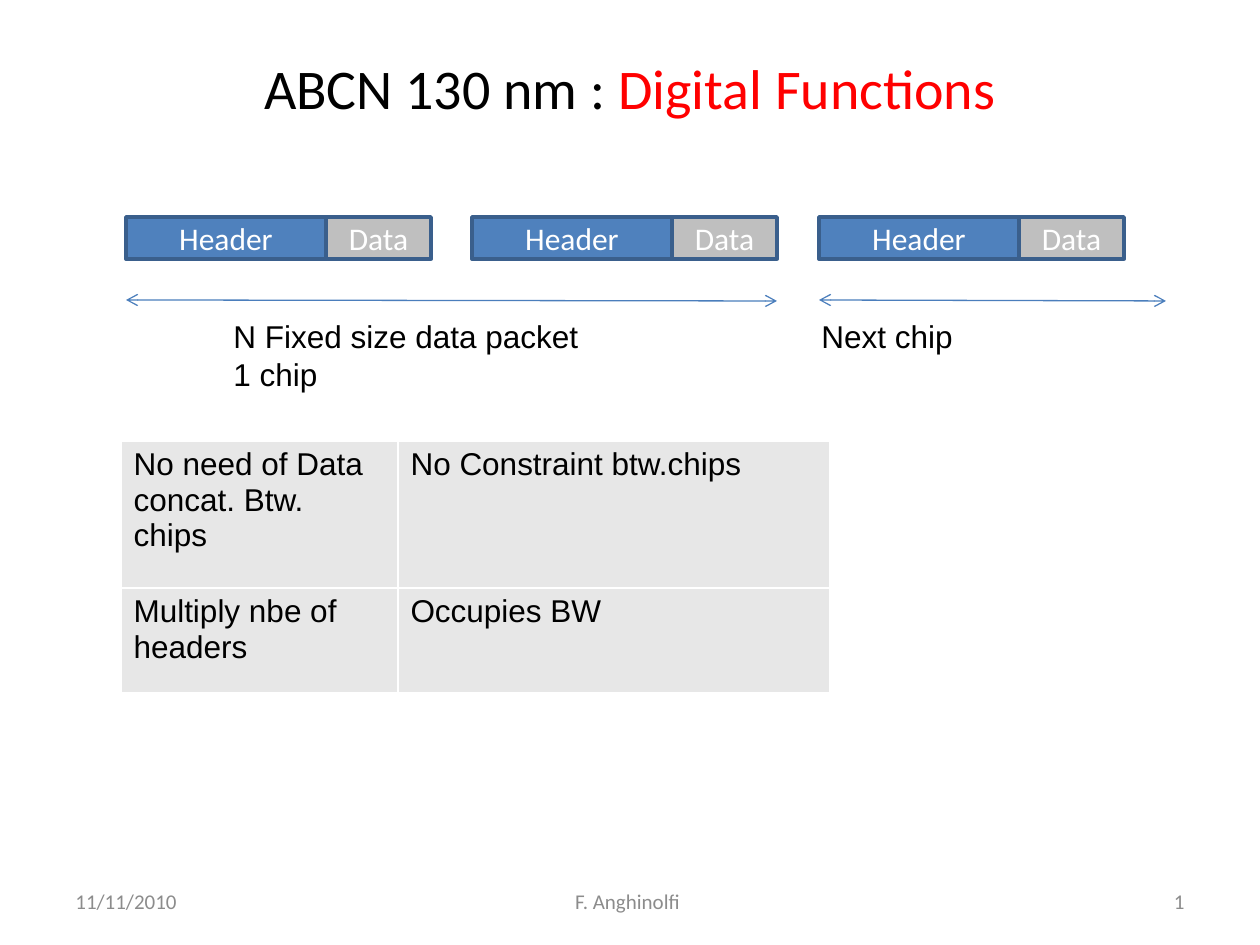
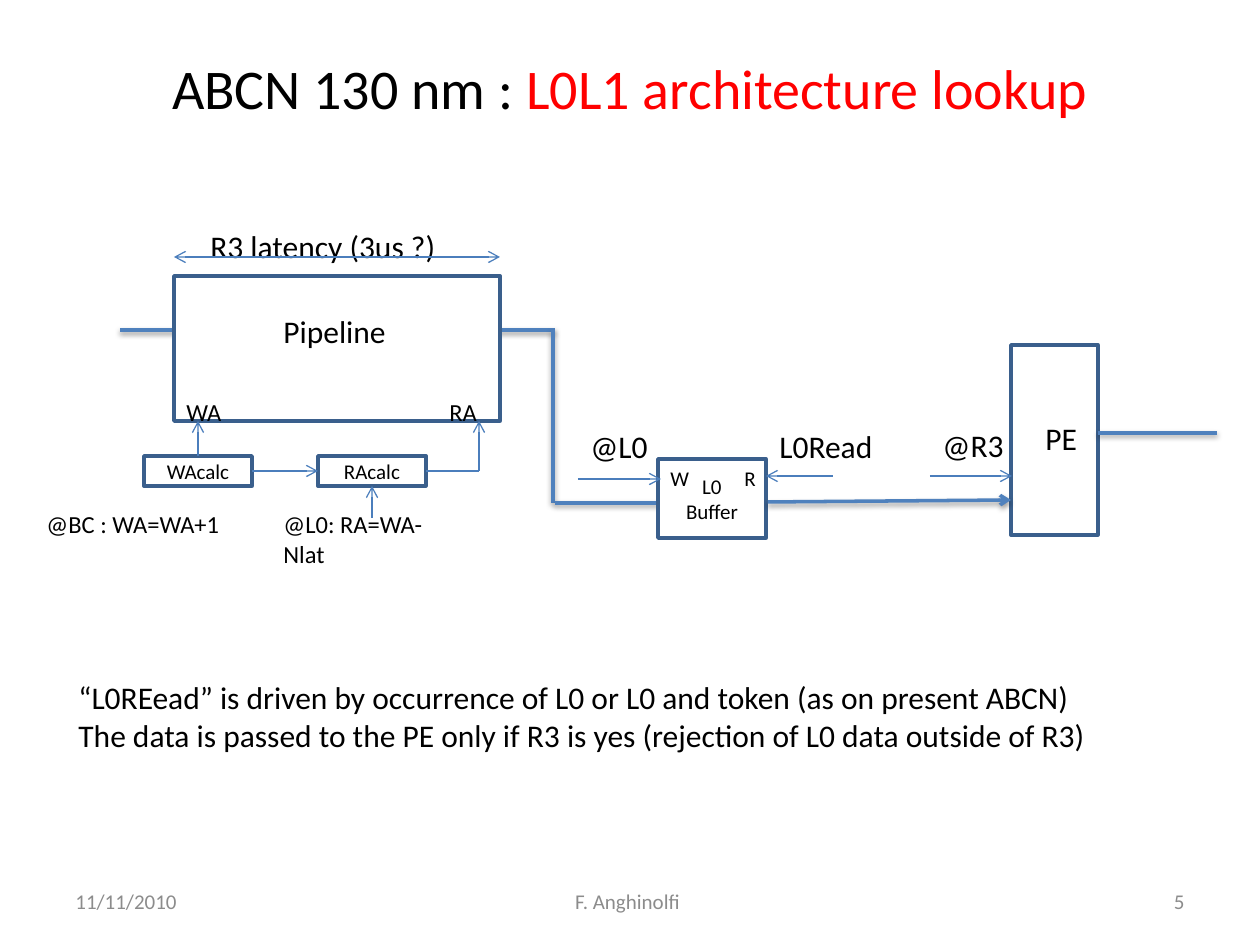
from lxml import etree
from pptx import Presentation
from pptx.dml.color import RGBColor
from pptx.enum.shapes import MSO_CONNECTOR, MSO_SHAPE
from pptx.enum.text import MSO_ANCHOR, PP_ALIGN
from pptx.oxml.ns import qn
from pptx.util import Pt

RECT = MSO_SHAPE.RECTANGLE
LINE = MSO_CONNECTOR.STRAIGHT
LEFT, MID, RIGHT = PP_ALIGN.LEFT, PP_ALIGN.CENTER, PP_ALIGN.RIGHT
TOP, CENTER = MSO_ANCHOR.TOP, MSO_ANCHOR.MIDDLE
N, W, S, E = range(4)
UNIT = 914400 / 126
FONT = "Calibri"
HUE = {
    "black": "000000", "white": "FFFFFF", "red": "FF0000",
    "blue": "4F81BD", "edge": "3A5F8C", "thin": "4B7EBC",
    "gray": "BFBFBF", "cell": "E7E7E7", "foot": "8C8C8C",
}


def emu(*px):
    """Turn px lengths into EMU."""
    return [round(p * UNIT) for p in px]


def rgb(name):
    """Look up a colour by name."""
    return RGBColor.from_string(HUE[name])


def style(frame, size, hue="black", align=LEFT, font=FONT):
    """Format every run of a text frame."""
    for para in frame.paragraphs:
        para.alignment = align
        for run in para.runs:
            run.font.name, run.font.size = font, Pt(size)
            run.font.color.rgb = rgb(hue)


def label(slide, box, text, size=18, hue="black", align=LEFT, font=FONT,
          anchor=TOP, wrap=True):
    """Add a text box and return its frame."""
    frame = slide.shapes.add_textbox(*emu(*box)).text_frame
    frame.word_wrap, frame.vertical_anchor = wrap, anchor
    frame.text = text
    style(frame, size, hue, align, font)
    return frame


def block(slide, box, text="", size=12, fill="white", hue="black"):
    """Add an outlined rectangle with centred text."""
    shape = slide.shapes.add_shape(RECT, *emu(*box))
    shape.shadow.inherit = False
    shape.fill.solid()
    shape.fill.fore_color.rgb = rgb(fill)
    shape.line.color.rgb = rgb("edge")
    shape.line.width = Pt(2)
    frame = shape.text_frame
    frame.vertical_anchor = CENTER
    frame.text = text
    style(frame, size, hue, MID)
    return shape


def wire(slide, start, end, head=False, tail=False, bus=False):
    """Add a thin line or a shadowed bus, with optional arrowheads."""
    link = slide.shapes.add_connector(LINE, *emu(*start, *end))
    link.line.color.rgb = rgb("blue" if bus else "thin")
    link.line.width = Pt(2 if bus else 0.75)
    edge = link.line._get_or_add_ln()
    for tag, on in (("a:headEnd", head), ("a:tailEnd", tail)):
        if on:
            etree.SubElement(edge, qn(tag), type="arrow")
    glow = etree.SubElement(link._element.spPr, qn("a:effectLst"))
    if bus:
        shade = etree.SubElement(
            glow, qn("a:outerShdw"), blurRad=str(Pt(3.1)),
            dist=str(Pt(1.6)), dir="5400000", rotWithShape="0")
        tint = etree.SubElement(shade, qn("a:srgbClr"), val=HUE["black"])
        etree.SubElement(tint, qn("a:alpha"), val="38000")
    return link


def page(deck, topic, num):
    """Start a slide with its title and footer."""
    slide = deck.slides.add_slide(deck.slide_layouts[6])
    frame = label(slide, (63, 38, 1134, 98), "ABCN 130 nm : ", 32,
                  align=MID, anchor=CENTER)
    frame.paragraphs[0].add_run().text = topic
    style(frame, 32, align=MID)
    frame.paragraphs[0].runs[1].font.color.rgb = rgb("red")
    for x, wide, text, align in (
            (63, 294, "11/11/2010", LEFT),
            (428, 399, "F. Anghinolfi", MID),
            (903, 294, num, RIGHT)):
        label(slide, (x, 876, wide, 50), text, 12, "foot", align,
              anchor=CENTER)
    return slide


def packets(slide, x, y):
    """Draw three packets and the spans that group them by chip."""
    for k in range(3):
        left = x + k * 693 // 2
        block(slide, (left, y, 200, 42), "Header", 18, "blue", "white")
        block(slide, (left + 200, y, 105, 42), "Data", 18, "gray", "white")
    for a, b in ((0, 651), (693, 1040)):
        wire(slide, (x + a, y + 83), (x + b, y + 84), True, True)
    label(slide, (x + 95, y + 94, 374, 89),
          "N Fixed size data packet\n1 chip", font="Arial", wrap=False)
    label(slide, (x + 683, y + 94, 158, 50), "Next chip", font="Arial",
          wrap=False)


def grid(slide, x, y, cols, rows, data):
    """Add the table of pros and cons."""
    box = emu(x, y, sum(cols), sum(rows))
    table = slide.shapes.add_table(len(rows), len(cols), *box).table
    table.first_row = table.horz_banding = False
    for col, wide in zip(table.columns, emu(*cols)):
        col.width = wide
    for row, high, texts in zip(table.rows, emu(*rows), data):
        row.height = high
        for cell, text in zip(row.cells, texts):
            cell.fill.solid()
            cell.fill.fore_color.rgb = rgb("cell")
            cell.text = text
            style(cell.text_frame, 18, font="Arial")


def pipe(slide, x, y, w, h):
    """Draw the pipeline with its latency span and address logic."""
    block(slide, (x, y, w, h))
    label(slide, (x + 97, y + 30, 134, 50), "Pipeline")
    label(slide, (x + 24, y - 55, 262, 50), "R3 latency (3us ?)")
    wire(slide, (x, y - 19), (x + w, y - 19), True, True)
    base, top = y + h, y + h + 35
    mid = top + 15
    for left, text in ((x, "WA"), (x + 263, "RA")):
        label(slide, (left, base - 30, 66, 43), text, 14)
    write = block(slide, (x - 30, top, 108, 30), "WAcalc")
    read = block(slide, (x + 144, top, 108, 30), "RAcalc")
    turn = x + 305
    wire(slide, (x + 24, top), (x + 24, base), tail=True).begin_connect(
        write, N)
    link = wire(slide, (x + 78, mid), (x + 144, mid), tail=True)
    link.begin_connect(write, E)
    link.end_connect(read, W)
    wire(slide, (x + 252, mid), (turn, mid)).begin_connect(read, E)
    wire(slide, (turn, mid), (turn, base), tail=True)
    wire(slide, (x + 198, top + 62), (x + 198, top + 30),
         tail=True).end_connect(read, S)
    label(slide, (x - 140, top + 47, 207, 43), "@BC : WA=WA+1", 14)
    label(slide, (x + 97, top + 47, 183, 72), "@L0: RA=WA-Nlat", 14)


def buffer(slide, x, y, w, h):
    """Draw the L0 buffer with its write and read strobes."""
    block(slide, (x, y, w, h), "L0\nBuffer")
    label(slide, (x, y, 57, 38), "W", 12)
    label(slide, (x + 74, y, 57, 38), "R", 12)
    label(slide, (x - 80, y - 38, 103, 50), "@L0")
    label(slide, (x + w + 1, y - 38, 136, 50), "L0Read")
    wire(slide, (x - 80, y + 20), (x + 3, y + 20), tail=True)
    wire(slide, (x + w, y + 17), (x + w + 67, y + 17), head=True)


def engine(slide, x, y, w, h):
    """Draw the PE block with its strobe and output."""
    block(slide, (x, y, w, h))
    label(slide, (x + 22, y + 68, 59, 50), "PE")
    label(slide, (x - 81, y + 75, 103, 50), "@R3")
    wire(slide, (x - 81, y + 131), (x + 1, y + 131), tail=True)
    wire(slide, (x + w, y + 88), (x + w + 119, y + 88), bus=True)


def main():
    """Build both slides and save the deck."""
    deck = Presentation()
    deck.slide_width, deck.slide_height = emu(1260, 945)

    slide = page(deck, "Digital Functions", "1")
    packets(slide, 126, 217)
    grid(slide, 121, 441, (277, 432), (147, 105), (
        ("No need of Data concat. Btw. chips", "No Constraint btw.chips"),
        ("Multiply nbe of headers", "Occupies BW")))

    slide = page(deck, "L0L1 architecture lookup", "5")
    for start, end in (((120, 330), (555, 330)), ((553, 330), (553, 503)),
                       ((555, 503), (658, 503))):
        wire(slide, start, end, bus=True)
    pipe(slide, 174, 276, 326, 145)
    buffer(slide, 658, 459, 108, 79)
    engine(slide, 1011, 345, 87, 190)
    wire(slide, (768, 502), (1011, 500), tail=True, bus=True)
    label(slide, (66, 672, 1042, 89),
          "“L0REead” is driven by occurrence of L0 or L0 and token "
          "(as on present ABCN)\nThe data is passed to the PE only if R3 "
          "is yes (rejection of L0 data outside of R3)", wrap=False)
    deck.save("out.pptx")


if __name__ == "__main__":
    main()
